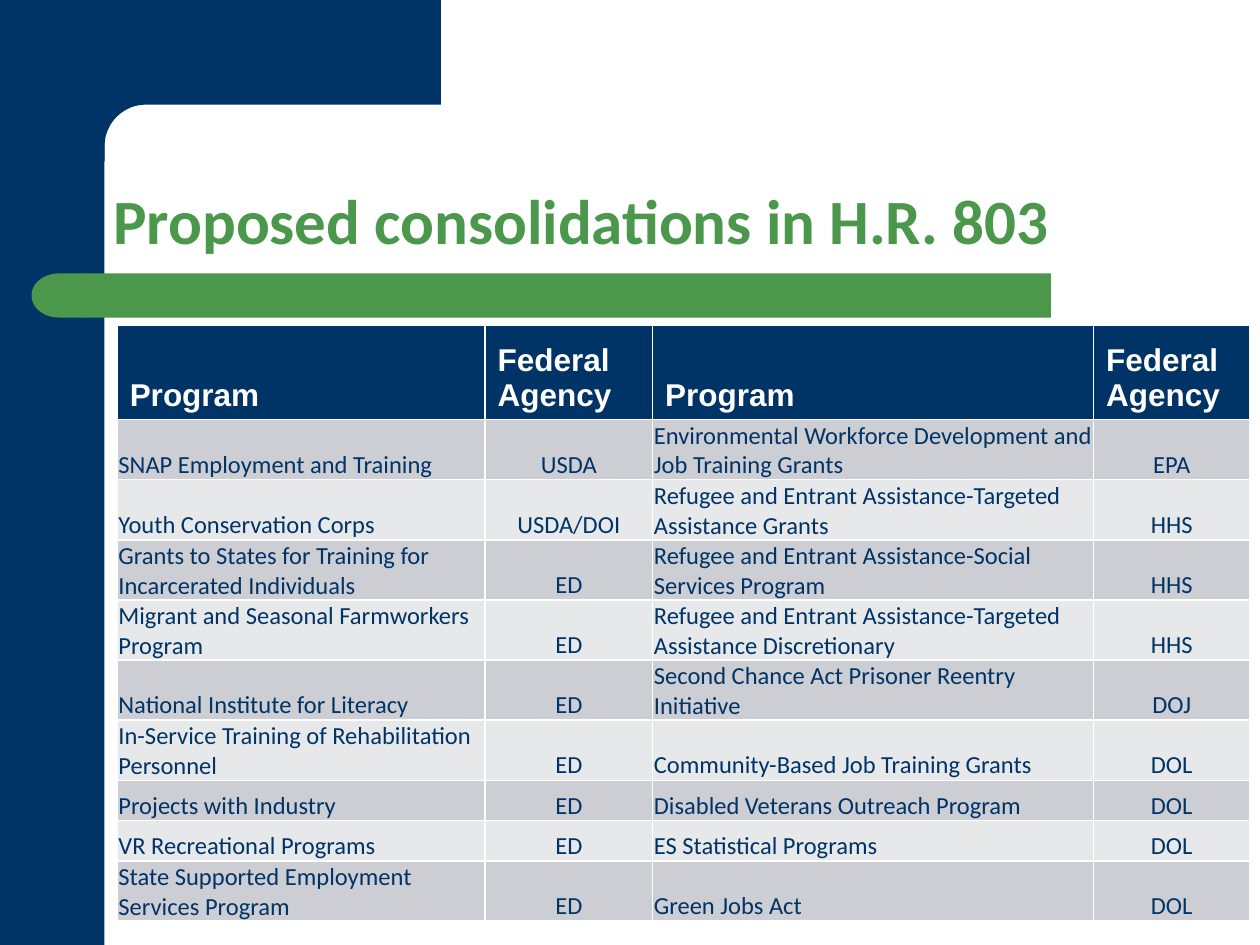
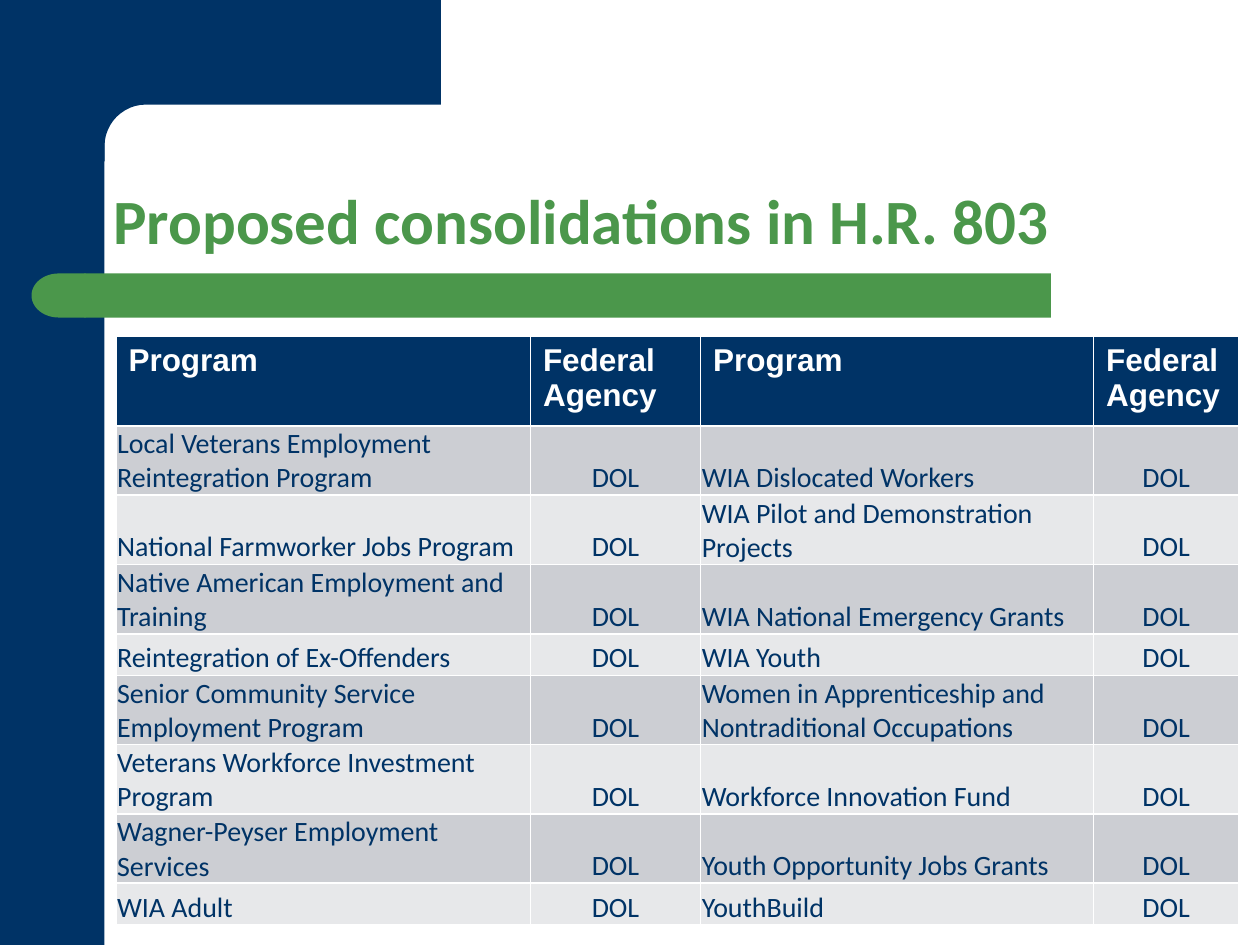
from math import cos, pi, sin

from pptx import Presentation
from pptx.dml.color import RGBColor
from pptx.enum.shapes import MSO_SHAPE as SHAPE
from pptx.enum.text import MSO_ANCHOR as ANCHOR, PP_ALIGN as ALIGN
from pptx.util import Inches, Pt

NAVY = RGBColor(0x00, 0x33, 0x66)
GREEN = RGBColor(0x4B, 0x97, 0x4B)
WHITE = RGBColor(0xFF, 0xFF, 0xFF)
BANDS = [RGBColor(0xCC, 0xCE, 0xD3), RGBColor(0xE7, 0xE8, 0xEA)]

TITLE = "Proposed consolidations in H.R. 803"
HEADINGS = ("Program", "Federal Agency") * 2

# Each slide: table place, column widths, row heights, header anchor, body size, rows
SLIDES = [
    dict(
        left=0.93, top=2.58, widths=[2.92, 1.33, 3.5, 1.24],
        heights=[0.75] + [0.32] * 9, header_anchor=ANCHOR.BOTTOM, body_size=14,
        programs=[
            ("SNAP Employment and Training", "USDA",
             "Environmental Workforce Development and Job Training Grants", "EPA"),
            ("Youth Conservation Corps", "USDA/DOI",
             "Refugee and Entrant Assistance-Targeted Assistance Grants", "HHS"),
            ("Grants to States for Training for Incarcerated Individuals", "ED",
             "Refugee and Entrant Assistance-Social Services Program", "HHS"),
            ("Migrant and Seasonal Farmworkers Program", "ED",
             "Refugee and Entrant Assistance-Targeted Assistance Discretionary", "HHS"),
            ("National Institute for Literacy", "ED",
             "Second Chance Act Prisoner Reentry Initiative", "DOJ"),
            ("In-Service Training of Rehabilitation Personnel", "ED",
             "Community-Based Job Training Grants", "DOL"),
            ("Projects with Industry", "ED", "Disabled Veterans Outreach Program", "DOL"),
            ("VR Recreational Programs", "ED", "ES Statistical Programs", "DOL"),
            ("State Supported Employment Services Program", "ED", "Green Jobs Act", "DOL"),
        ],
    ),
    dict(
        left=0.92, top=2.67, widths=[3.29, 1.35, 3.12, 1.15],
        heights=[0.71] + [0.55, 0.55, 0.55, 0.33] * 2, header_anchor=ANCHOR.TOP, body_size=16,
        programs=[
            ("Local Veterans Employment Reintegration Program", "DOL",
             "WIA Dislocated Workers", "DOL"),
            ("National Farmworker Jobs Program", "DOL",
             "WIA Pilot and Demonstration Projects", "DOL"),
            ("Native American Employment and Training", "DOL",
             "WIA National Emergency Grants", "DOL"),
            ("Reintegration of Ex-Offenders", "DOL", "WIA Youth", "DOL"),
            ("Senior Community Service Employment Program", "DOL",
             "Women in Apprenticeship and Nontraditional Occupations", "DOL"),
            ("Veterans Workforce Investment Program", "DOL", "Workforce Innovation Fund", "DOL"),
            ("Wagner-Peyser Employment Services", "DOL", "Youth Opportunity Jobs Grants", "DOL"),
            ("WIA Adult", "DOL", "YouthBuild", "DOL"),
        ],
    ),
]

# Outline of the top block, with a quarter circle cut at its inner corner
RADIUS, CENTER, STEPS = 0.33, 1.16, 12
arc = [(CENTER - RADIUS * sin(pi / 2 * i / STEPS), CENTER - RADIUS * cos(pi / 2 * i / STEPS))
       for i in range(STEPS + 1)]
CORNER = [(3.5, 0), (3.5, 0.83), *arc, (0.83, 1.28), (0.5, 1.28), (0.5, 0)]


def paint(shape, color):
    shape.shadow.inherit = False
    shape.fill.solid()
    shape.fill.fore_color.rgb = color
    shape.line.fill.background()


def style(paragraph, face, size, color, bold):
    font = paragraph.font
    font.name, font.size, font.bold = face, Pt(size), bold
    font.color.rgb = color


prs = Presentation()
prs.slide_width, prs.slide_height = Inches(10), Inches(7.5)

for content in SLIDES:
    slide = prs.slides.add_slide(prs.slide_layouts[6])
    shapes = slide.shapes

    # Navy side band and top block
    side_band = shapes.add_shape(SHAPE.RECTANGLE, 0, 0, Inches(0.83), Inches(7.5))
    paint(side_band, NAVY)
    points = [(Inches(x), Inches(y)) for x, y in CORNER]
    outline = shapes.build_freeform(*points[0])
    outline.add_line_segments(points[1:], close=True)
    paint(outline.convert_to_shape(), NAVY)

    # Green rule with a rounded left end
    rule = shapes.add_shape(SHAPE.ROUNDED_RECTANGLE,
                            Inches(0.67), Inches(2.17), Inches(7.67), Inches(0.35))
    rule.adjustments[0] = 0
    paint(rule, GREEN)
    rule_end = shapes.add_shape(SHAPE.FLOWCHART_DELAY,
                                Inches(0.25), Inches(2.17), Inches(0.43), Inches(0.35))
    rule_end.rotation = 180
    paint(rule_end, GREEN)

    # Title
    title = shapes.add_textbox(Inches(0.83), Inches(0.83), Inches(8.67), Inches(1.25)).text_frame
    title.word_wrap = True
    title.vertical_anchor = ANCHOR.BOTTOM
    title.margin_left, title.margin_bottom = Inches(0.07), Inches(0.03)
    title.text = TITLE
    title.paragraphs[0].line_spacing = 0.9
    style(title.paragraphs[0], "Calibri", 36, GREEN, True)

    # Table of programs and agencies
    rows = [HEADINGS] + content["programs"]
    table = shapes.add_table(len(rows), len(HEADINGS),
                             Inches(content["left"]), Inches(content["top"]),
                             Inches(sum(content["widths"])),
                             Inches(sum(content["heights"]))).table
    for column, width in zip(table.columns, content["widths"]):
        column.width = Inches(width)
    for r, (row, height) in enumerate(zip(rows, content["heights"])):
        table.rows[r].height = Inches(height)
        for c, text in enumerate(row):
            cell = table.cell(r, c)
            cell.text = text
            entry = cell.text_frame.paragraphs[0]
            cell.fill.solid()
            if r == 0:
                cell.fill.fore_color.rgb = NAVY
                cell.vertical_anchor = content["header_anchor"]
                style(entry, "Arial", 18, WHITE, True)
                continue
            cell.fill.fore_color.rgb = BANDS[(r - 1) % 2]
            cell.vertical_anchor = ANCHOR.BOTTOM
            cell.margin_left = cell.margin_right = cell.margin_top = Inches(0.01)
            cell.margin_bottom = 0
            entry.alignment = ALIGN.CENTER if c % 2 else ALIGN.LEFT
            style(entry, "Calibri", content["body_size"], NAVY, False)

prs.save("out.pptx")
